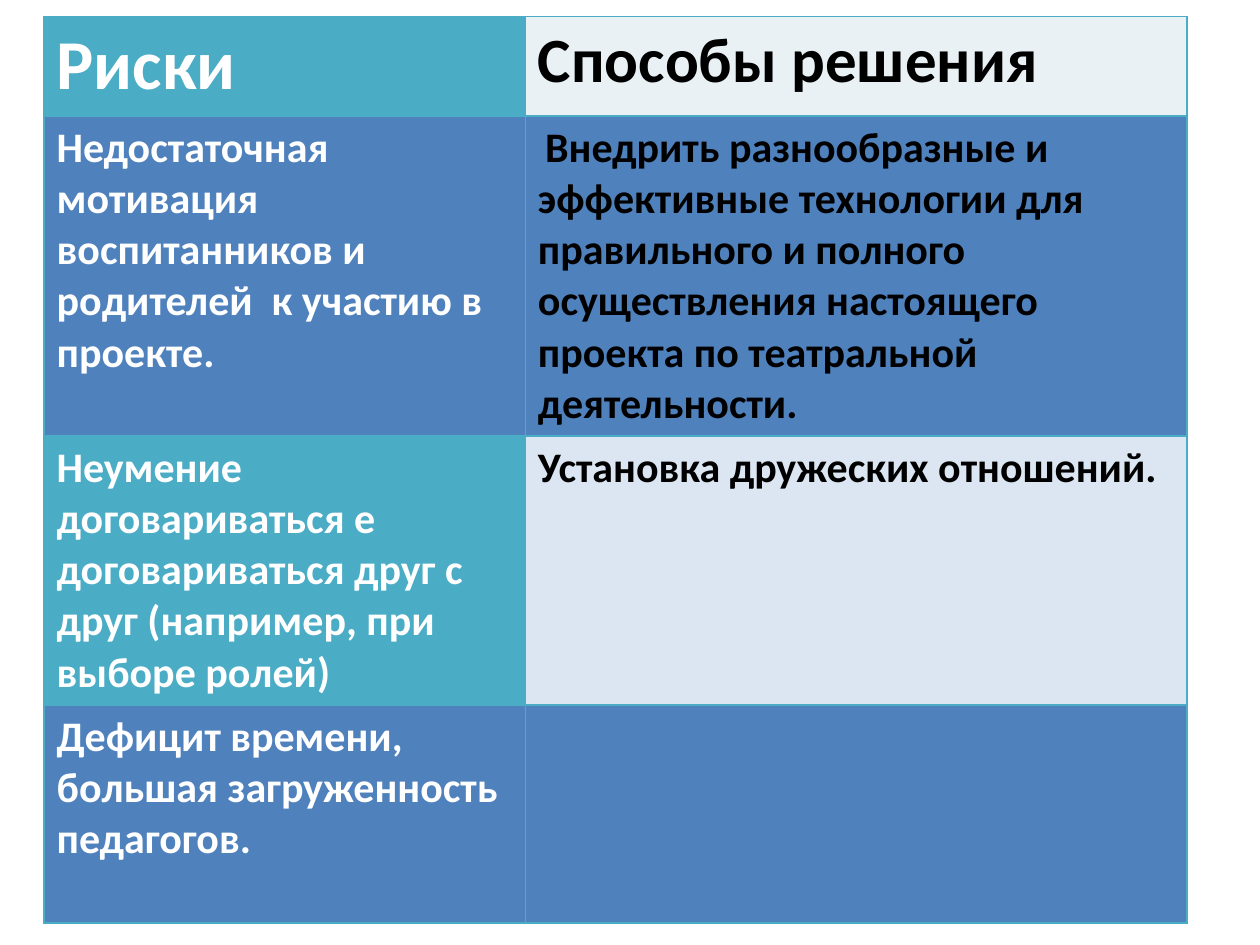
from dataclasses import dataclass

from lxml import etree
from pptx import Presentation
from pptx.dml.color import RGBColor
from pptx.oxml.ns import qn
from pptx.util import Inches, Pt

BLANK_LAYOUT = 6


@dataclass(frozen=True)
class Theme:
    font: str = "Calibri"
    white: str = "FFFFFF"
    black: str = "000000"
    teal: str = "4BACC6"
    blue: str = "4F81BD"
    pale_teal: str = "E9F1F5"
    pale_blue: str = "DCE6F2"
    risk_heading: int = 40
    solution_heading: int = 36
    body: int = 24
    lead_space: int = 18
    border: int = 1


theme = Theme()


def add_span(para, text, size, color, bold=True):
    span = para.add_run()
    span.text = text
    span.font.name = theme.font
    span.font.size = Pt(size)
    span.font.bold = bold
    span.font.color.rgb = RGBColor.from_string(color)


def set_borders(cell, color, width):
    """Outline all four sides; borders must precede the fill in the XML."""
    properties = cell._tc.get_or_add_tcPr()
    for position, side in enumerate(("a:lnL", "a:lnR", "a:lnT", "a:lnB")):
        line = etree.Element(qn(side), w=str(Pt(width)))
        fill = etree.SubElement(line, qn("a:solidFill"))
        etree.SubElement(fill, qn("a:srgbClr"), val=color)
        properties.insert(position, line)


deck = Presentation()
deck.slide_width, deck.slide_height = Inches(10), Inches(7.5)
page = deck.slides.add_slide(deck.slide_layouts[BLANK_LAYOUT])

column_widths = [3.82, 5.25]
row_heights = [0.79, 2.54, 2.13, 1.73]

# Each row: risk text, risk fill, solution text, solution fill
rows = [
    ("Риски", theme.teal, "Способы решения", theme.pale_teal),
    ("Недостаточная мотивация воспитанников и родителей  к участию в проекте.", theme.blue,
     " Внедрить разнообразные и эффективные технологии для правильного и полного "
     "осуществления настоящего проекта по театральной деятельности.", theme.blue),
    ("Неумение договариваться е договариваться друг с друг (например, при выборе ролей)",
     theme.teal, "Установка дружеских отношений.", theme.pale_blue),
    ("Дефицит времени, большая загруженность педагогов.", theme.blue, "", theme.blue),
]

table = page.shapes.add_table(
    len(rows), len(column_widths), Inches(0.35), Inches(0.13),
    Inches(sum(column_widths)), Inches(sum(row_heights))).table
for column, width in zip(table.columns, column_widths):
    column.width = Inches(width)
for row, height in zip(table.rows, row_heights):
    row.height = Inches(height)

for row_index, (risk, risk_fill, solution, solution_fill) in enumerate(rows):
    entries = [
        (risk, risk_fill, theme.white, theme.risk_heading),
        (solution, solution_fill, theme.black, theme.solution_heading),
    ]
    for column_index, (text, fill, color, heading_size) in enumerate(entries):
        cell = table.cell(row_index, column_index)
        cell.fill.solid()
        cell.fill.fore_color.rgb = RGBColor.from_string(fill)
        set_borders(cell, theme.teal, theme.border)
        para = cell.text_frame.paragraphs[0]
        if text.startswith(" "):
            add_span(para, " ", theme.lead_space, color, bold=False)
        if text:
            size = heading_size if row_index == 0 else theme.body
            add_span(para, text.lstrip(), size, color)

deck.save("out.pptx")
